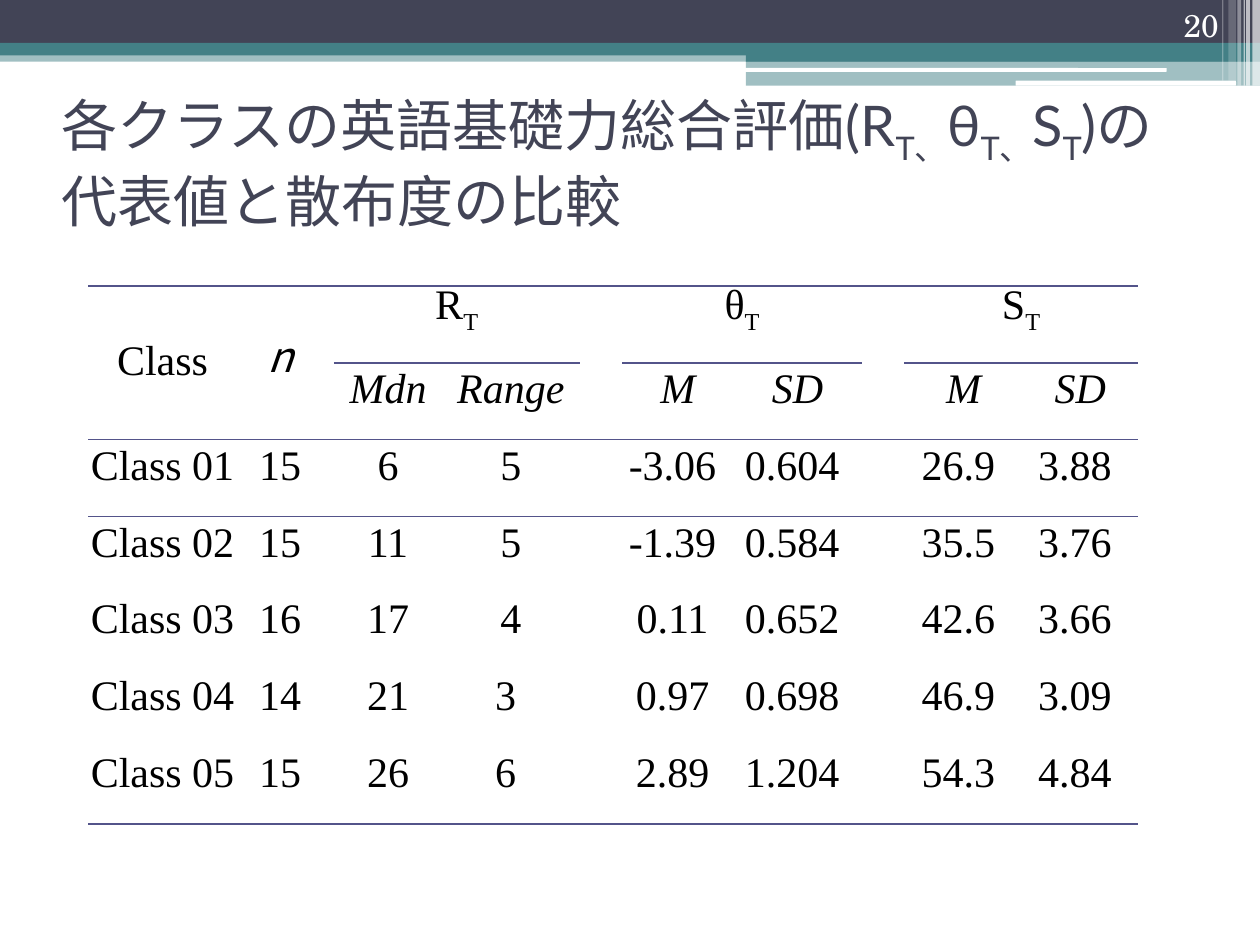
from typing import NamedTuple

from lxml.etree import SubElement
from pptx import Presentation
from pptx.dml.color import RGBColor
from pptx.enum.shapes import MSO_SHAPE as Preset
from pptx.enum.text import MSO_ANCHOR as Anchor, MSO_AUTO_SIZE as AutoSize, PP_ALIGN as Align
from pptx.oxml.ns import qn
from pptx.util import Inches, Pt

NAVY = RGBColor(0x42, 0x44, 0x56)
TEAL = RGBColor(0x43, 0x80, 0x86)
WHITE = RGBColor(0xFF, 0xFF, 0xFF)
BLACK = RGBColor(0x00, 0x00, 0x00)
RULE = RGBColor(0x53, 0x54, 0x8A)
SERIF = "Times New Roman"
JAPANESE = "Noto Sans CJK JP"
NO_STYLE = "{2D5ABB26-0587-4C30-8999-92F81FD0307C}"


class Bar(NamedTuple):
    left: float
    top: float
    width: float
    height: float
    color: RGBColor
    opacity: int = 100
    preset: Preset = Preset.RECTANGLE


class Span(NamedTuple):
    text: str
    subscript: bool = False


class Style(NamedTuple):
    font: str
    size: int
    color: RGBColor
    italic: bool = False


BARS = [
    Bar(0, 0.4, 10, 0.09, TEAL, 50),
    Bar(0, 0, 10, 0.34, NAVY),
    Bar(0, 0.34, 10, 0.1, TEAL),
    Bar(5.92, 0.39, 4.08, 0.1, TEAL),
    Bar(5.92, 0.48, 4.08, 0.2, TEAL, 50),
    Bar(5.91, 0.54, 3.35, 0.03, WHITE, preset=Preset.ROUNDED_RECTANGLE),
    Bar(8.06, 0.64, 1.75, 0.04, WHITE, preset=Preset.ROUNDED_RECTANGLE),
    Bar(9.94, 0, 0.06, 0.68, WHITE, 65),
    Bar(9.89, 0, 0.03, 0.68, WHITE, 65),
    Bar(9.87, 0, 0.01, 0.68, WHITE, 60),
    Bar(9.82, 0, 0.03, 0.68, WHITE, 40),
    Bar(9.75, 0, 0.06, 0.64, WHITE, 20),
    Bar(9.7, 0, 0.01, 0.64, WHITE, 30),
]

TITLE = [
    Span("各クラスの英語基礎力総合評価(R"), Span("T、", True),
    Span("θ"), Span("T、", True),
    Span("S"), Span("T", True),
    Span(")の代表値と散布度の比較"),
]

COLUMN_WIDTHS = [1.18, 0.77, 0.86, 1.09, 0.34, 0.88, 1.02, 0.34, 0.94, 0.91]
ROW_HEIGHT = 0.61
GROUPS = {2: "R", 5: "θ", 8: "S"}
MEASURES = {2: "Mdn", 3: "Range", 5: "M", 6: "SD", 8: "M", 9: "SD"}
VALUE_COLUMNS = [0, 1, *MEASURES]
CLASSES = [
    ("Class 01 ", "15 ", "6", "5", "-3.06 ", "0.604 ", "26.9 ", "3.88 "),
    ("Class 02 ", "15 ", "11", "5", "-1.39 ", "0.584 ", "35.5 ", "3.76 "),
    ("Class 03 ", "16 ", "17", "4", "0.11 ", "0.652 ", "42.6 ", "3.66 "),
    ("Class 04 ", "14 ", "21", "3 ", "0.97 ", "0.698 ", "46.9 ", "3.09 "),
    ("Class 05 ", "15 ", "26", "6 ", "2.89 ", "1.204 ", "54.3 ", "4.84 "),
]
HEADER_ROWS = 2
ROW_COUNT = HEADER_ROWS + len(CLASSES)

BODY = Style(SERIF, 24, BLACK)
ITALIC = Style(SERIF, 24, BLACK, True)


def write(para, spans: list[Span], style: Style) -> None:
    for span in spans:
        run = para.add_run()
        run.text = span.text
        run.font.name = style.font
        run.font.size = Pt(style.size)
        run.font.italic = style.italic
        run.font.color.rgb = style.color
        properties = run.font._element
        SubElement(properties, qn("a:ea"), typeface=JAPANESE)
        if span.subscript:
            properties.set("baseline", "-25000")


def draw_bar(page, bar: Bar) -> None:
    shape = page.shapes.add_shape(bar.preset, *map(Inches, bar[:4]))
    shape.shadow.inherit = False
    shape.fill.solid()
    shape.fill.fore_color.rgb = bar.color
    shape.line.fill.background()
    if bar.opacity < 100:
        color = shape.fill._xPr.find(".//" + qn("a:srgbClr"))
        SubElement(color, qn("a:alpha"), val=str(bar.opacity * 1000))


def draw_title(page) -> None:
    title = page.shapes.title
    title.left, title.top, title.width, title.height = map(Inches, (0.39, 0.7, 9, 1.17))
    frame = title.text_frame
    frame.word_wrap = True
    frame.auto_size = AutoSize.NONE
    frame.vertical_anchor = Anchor.MIDDLE
    para = frame.paragraphs[0]
    para.alignment = Align.LEFT
    write(para, TITLE, Style("Lato", 32, NAVY))


def draw_page_number(page, number: str) -> None:
    box = page.shapes.add_textbox(*map(Inches, (8.94, 0, 0.83, 0.4)))
    frame = box.text_frame
    frame.word_wrap = True
    frame.vertical_anchor = Anchor.BOTTOM
    para = frame.paragraphs[0]
    para.alignment = Align.RIGHT
    write(para, [Span(number)], Style("TeX Gyre Schola", 18, WHITE))


def fill_cell(cell, spans: list[Span], style: Style = BODY, top: float = 0.01) -> None:
    cell.margin_left = cell.margin_right = Inches(0.01)
    cell.margin_top, cell.margin_bottom = Inches(top), 0
    cell.vertical_anchor = Anchor.MIDDLE
    para = cell.text_frame.paragraphs[0]
    para.alignment = Align.CENTER
    para.line_spacing = Pt(12)
    write(para, spans, style)


def has_rule(edge: int, column: int) -> bool:
    return edge in (0, HEADER_ROWS, ROW_COUNT) or (edge == 1 and column in MEASURES)


def rule_cell(cell, top: bool, bottom: bool) -> None:
    properties = cell._tc.get_or_add_tcPr()
    for tag, visible in (("a:lnT", top), ("a:lnB", bottom)):
        if visible:
            line = SubElement(properties, qn(tag), w=str(Pt(1)))
            fill = SubElement(line, qn("a:solidFill"))
            SubElement(fill, qn("a:srgbClr"), val=str(RULE))
    cell.fill.background()


def draw_table(page) -> None:
    graphic = page.shapes.add_table(
        ROW_COUNT, len(COLUMN_WIDTHS), Inches(0.7), Inches(2.27),
        Inches(sum(COLUMN_WIDTHS)), Inches(ROW_HEIGHT * ROW_COUNT))
    table = graphic.table
    table.first_row = table.horz_banding = False
    table._tbl.tblPr.find(qn("a:tableStyleId")).text = NO_STYLE
    for column, width in zip(table.columns, COLUMN_WIDTHS):
        column.width = Inches(width)
    for row in table.rows:
        row.height = Inches(ROW_HEIGHT)

    for column, (label, style) in enumerate(
            [("Class", BODY), ("n ", Style(JAPANESE, 24, BLACK, True))]):
        cell = table.cell(0, column)
        cell.merge(table.cell(1, column))
        fill_cell(cell, [Span(label)], style, top=0.18)
    for column, symbol in GROUPS.items():
        cell = table.cell(0, column)
        cell.merge(table.cell(0, column + 1))
        fill_cell(cell, [Span(symbol), Span("T", True)])
    for column, label in MEASURES.items():
        fill_cell(table.cell(1, column), [Span(label)], ITALIC)
    for row, values in enumerate(CLASSES, HEADER_ROWS):
        for column, value in zip(VALUE_COLUMNS, values):
            fill_cell(table.cell(row, column), [Span(value)])

    for row in range(ROW_COUNT):
        for column in range(len(COLUMN_WIDTHS)):
            cell = table.cell(row, column)
            last = row + (cell.span_height if cell.is_merge_origin else 1)
            rule_cell(cell, has_rule(row, column), has_rule(last, column))


def main() -> None:
    deck = Presentation()
    deck.slide_width, deck.slide_height = Inches(10), Inches(7.5)
    page = deck.slides.add_slide(deck.slide_layouts[5])
    for bar in BARS:
        draw_bar(page, bar)
    draw_title(page)
    draw_page_number(page, "20")
    draw_table(page)
    deck.save("out.pptx")


if __name__ == "__main__":
    main()
